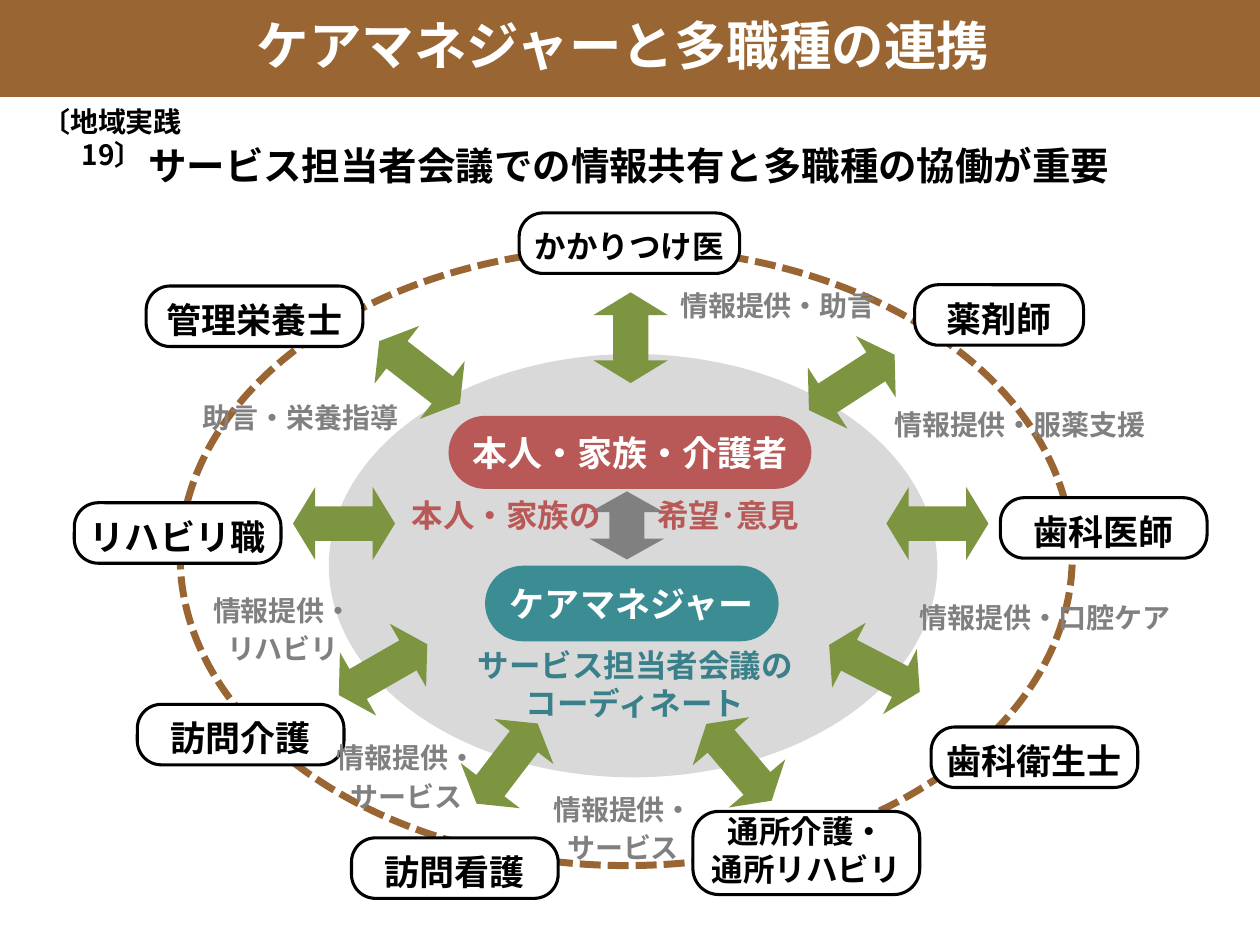
from pptx import Presentation, util as u
from pptx.dml.color import RGBColor
from pptx.enum import dml, lang, shapes, text
from pptx.oxml import ns, xmlchemy

PX = 9144  # 100 px to the inch
FONT = "Noto Sans CJK JP"
BROWN, GREEN, GREY, RED, TEAL = "996633", "7D9541", "808080", "B95957", "3C8C93"
BLACK, WHITE = "000000", "FFFFFF"
KIND = shapes.MSO_SHAPE

deck = Presentation()
deck.slide_width, deck.slide_height = 1000 * PX, 750 * PX
page = deck.slides.add_slide(deck.slide_layouts[6])


def draw(kind, at, fill=None, line=None, weight=1.75, adjust=(), turn=0):
    """Add a preset shape, or a text box when kind is None."""
    place = [n * PX for n in at]
    if kind is None:
        return page.shapes.add_textbox(*place)
    box = page.shapes.add_shape(kind, *place)
    box.shadow.inherit = False
    box.rotation = turn
    for i, value in enumerate(adjust):
        box.adjustments[i] = value
    for paint, colour in ((box.fill, fill), (box.line.fill, line)):
        if colour:
            paint.solid()
            paint.fore_color.rgb = RGBColor.from_string(colour)
        else:
            paint.background()
    if line:
        box.line.width = u.Pt(weight)
    return box


def write(box, lines, size, colour, spacing=None, middle=False, wrap=True,
          align=text.PP_ALIGN.CENTER):
    """Fill a box with bold paragraphs, one per line."""
    frame = box.text_frame
    frame.word_wrap = wrap
    frame.vertical_anchor = text.MSO_ANCHOR.MIDDLE if middle else text.MSO_ANCHOR.TOP
    for i, words in enumerate(lines):
        para = frame.add_paragraph() if i else frame.paragraphs[0]
        para.alignment = align
        if spacing:
            para.line_spacing = spacing
        span = para.add_run()
        span.text = words
        span.font.size, span.font.bold, span.font.name = u.Pt(size), True, FONT
        span.font.color.rgb = RGBColor.from_string(colour)
        span.font.language_id = lang.MSO_LANGUAGE_ID.JAPANESE
        # East Asian typeface sits right after the Latin one
        east = xmlchemy.OxmlElement("a:ea")
        east.set("typeface", FONT)
        span._r.rPr.find(ns.qn("a:latin")).addnext(east)


# Inner field, title banner and dashed ring
draw(KIND.OVAL, (261, 281, 483, 336), "D9D9D9")
draw(KIND.RECTANGLE, (0, -1, 1000, 78), BROWN)
write(draw(None, (140, 0, 709, 70)), ["ケアマネジャーと多職種の連携"], 30, WHITE, middle=True)
ring = draw(KIND.OVAL, (143, 197, 708, 490), line=BROWN, weight=4)
ring.line.dash_style = dml.MSO_LINE.SQUARE_DOT

# Two-way arrows: left, top, width, height, rotation, colour
arrows = [
    (304, 255, 58, 81, 127.7, GREEN),
    (665, 490, 58, 81, 117.4, GREEN),
    (244, 375, 58, 81, 270, GREEN),
    (373, 566, 59, 80, 217.3, GREEN),
    (557, 565, 59, 80, 139.6, GREEN),
    (647, 263, 58, 81, 237.1, GREEN),
    (715, 375, 58, 81, 270, GREEN),
    (471, 232, 59, 72, 180, GREEN),
    (275, 491, 58, 81, 240.1, GREEN),
    (468, 390, 59, 54, 180, GREY),
]
for *at, turn, colour in arrows:
    arrow = draw(KIND.UP_DOWN_ARROW, at, colour, turn=turn)
    # Shaft width and head length, named as the preset expects
    guides = arrow._element.spPr.find(ns.qn("a:prstGeom")).get_or_add_avLst()
    for guide in list(guides):
        guides.remove(guide)
    for name, value in (("adj1", 47300), ("adj2", 30500)):
        guide = xmlchemy.OxmlElement("a:gd")
        guide.set("name", name)
        guide.set("fmla", f"val {value}")
        guides.append(guide)

# Person and care manager in the centre
centre = [
    ((356, 330, 288, 58), RED, "本人・家族・介護者"),
    ((385, 449, 233, 60), TEAL, "ケアマネジャー"),
]
for at, colour, words in centre:
    pill = draw(KIND.ROUNDED_RECTANGLE, at, colour, adjust=(0.5,))
    write(pill, [words], 20, WHITE, middle=True, wrap=False)
for left, width, words in ((317, 172, "本人・家族の"), (512, 150, "希望･意見")):
    write(draw(None, (left, 389, width, 40)), [words], 18, RED, wrap=False,
          align=text.PP_ALIGN.LEFT)
write(draw(None, (365, 508, 278, 71)), ["サービス担当者会議の", "コーディネート"],
      18, "3A808A", wrap=False)

# Professions around the ring: place, corner, text size, line spacing, lines
professions = [
    ((59, 399, 164, 48), 0.396, 20, 1.3, ["リハビリ職"]),
    ((116, 227, 172, 48), 0.396, 20, 1.3, ["管理栄養士"]),
    ((412, 169, 175, 48), 0.396, 18, 1.3, ["かかりつけ医"]),
    ((726, 226, 134, 48), 0.396, 20, 1.3, ["薬剤師"]),
    ((794, 395, 164, 48), 0.396, 20, 1.3, ["歯科医師"]),
    ((739, 577, 164, 48), 0.396, 20, 1.3, ["歯科衛生士"]),
    ((550, 644, 180, 66), 0.31, 18, None, ["通所介護・", "通所リハビリ"]),
    ((279, 665, 164, 48), 0.396, 20, 1.3, ["訪問看護"]),
    ((109, 559, 164, 48), 0.396, 20, 1.3, ["訪問介護"]),
]
for at, corner, size, spacing, lines in professions:
    pill = draw(KIND.ROUNDED_RECTANGLE, at, WHITE, BLACK, adjust=(corner,))
    pill.text_frame.margin_bottom = 10 * PX
    write(pill, lines, size, BLACK, spacing, middle=True, wrap=False)

# What each profession contributes
notes = [
    ((511, 220, 213, 36), ["情報提供・助言"]),
    ((696, 315, 227, 36), ["情報提供・服薬支援"]),
    ((716, 468, 227, 36), ["情報提供・口腔ケア"]),
    ((132, 309, 213, 36), ["助言・栄養指導"]),
    ((198, 579, 249, 67), ["情報提供・", "サービス"]),
    ((370, 620, 249, 67), ["情報提供・", "サービス"]),
    ((100, 462, 249, 67), ["情報提供・", "リハビリ"]),
]
for at, lines in notes:
    write(draw(None, at), lines, 16, GREY, u.Pt(22))

# Subtitle and section tag
write(draw(None, (42, 99, 914, 64)), ["サービス担当者会議での情報共有と多職種の協働が重要"],
      22, BLACK, middle=True)
write(draw(None, (0, 78, 178, 37)), ["〔地域実践19〕"], 16, BLACK)

deck.save("out.pptx")
